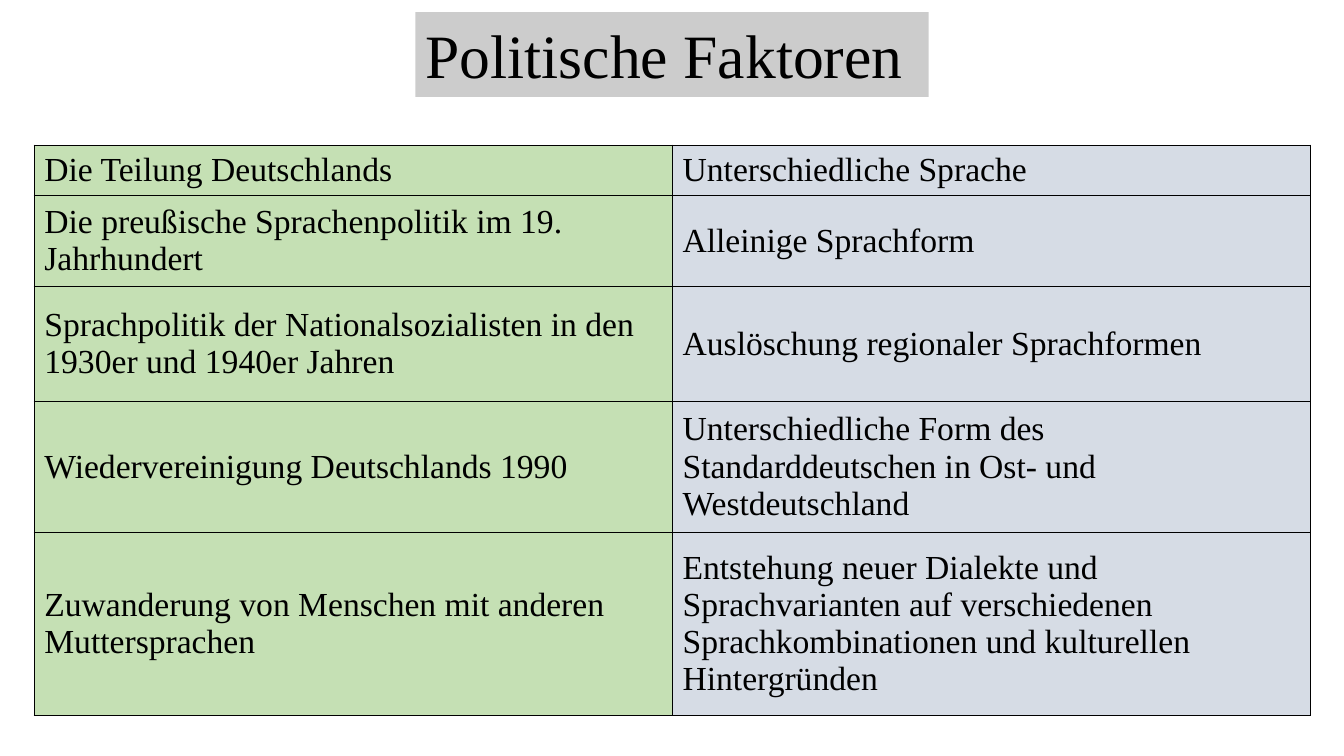
from dataclasses import dataclass

from lxml import etree
from pptx import Presentation
from pptx.dml.color import RGBColor
from pptx.enum.text import MSO_ANCHOR, MSO_AUTO_SIZE, PP_ALIGN
from pptx.oxml.ns import qn
from pptx.util import Inches, Pt

MIDDLE = MSO_ANCHOR.MIDDLE
TOP = MSO_ANCHOR.TOP
LEFT = PP_ALIGN.LEFT
FIXED = MSO_AUTO_SIZE.NONE
TITLE_ONLY = 5


@dataclass
class Theme:
    face: str = "Times New Roman"
    ink: str = "000000"
    cause: str = "C5E0B4"
    effect: str = "D6DCE5"
    head: int = 44
    body: int = 24
    rule: int = 1
    veil: int = 20


def apply(item, values):
    for name, value in values.items():
        setattr(item, name, value)


class Deck:
    def __init__(self, theme):
        self.theme = theme
        self.file = Presentation()
        apply(self.file, {"slide_width": Inches(13.33), "slide_height": Inches(7.5)})
        self.slide = self.file.slides.add_slide(self.file.slide_layouts[TITLE_ONLY])

    def label(self, frame, text, size):
        frame.text = text
        line = frame.paragraphs[0]
        line.alignment = LEFT
        font = line.runs[0].font
        apply(font, {"name": self.theme.face, "size": Pt(size)})
        font.color.rgb = RGBColor.from_string(self.theme.ink)

    def paint(self, item, color):
        item.fill.solid()
        item.fill.fore_color.rgb = RGBColor.from_string(color)

    def title(self, text, left, top, width, height):
        box = self.slide.shapes.title
        apply(box, {"left": Inches(left), "top": Inches(top),
                    "width": Inches(width), "height": Inches(height)})
        self.paint(box, self.theme.ink)
        color = box._element.spPr.find(".//" + qn("a:srgbClr"))
        etree.SubElement(color, qn("a:alpha"), val=str(self.theme.veil * 1000))
        self.label(box.text_frame, text, self.theme.head)
        apply(box.text_frame, {"word_wrap": True, "auto_size": FIXED,
                               "vertical_anchor": TOP})

    def border(self, cell):
        props = cell._tc.get_or_add_tcPr()
        for spot, side in enumerate(("a:lnL", "a:lnR", "a:lnT", "a:lnB")):
            line = etree.Element(qn(side), w=str(int(Pt(self.theme.rule))))
            fill = etree.SubElement(line, qn("a:solidFill"))
            etree.SubElement(fill, qn("a:srgbClr"), val=self.theme.ink)
            props.insert(spot, line)

    def table(self, rows, fills, heights, left, top, width):
        grid = self.slide.shapes.add_table(
            len(rows), len(fills), Inches(left), Inches(top),
            Inches(width), Inches(sum(heights))).table
        apply(grid, {"first_row": False, "horz_banding": False})
        for row, height, texts in zip(grid.rows, heights, rows):
            row.height = Inches(height)
            for cell, text, fill in zip(row.cells, texts, fills):
                self.label(cell.text_frame, text, self.theme.body)
                cell.vertical_anchor = MIDDLE
                self.paint(cell, fill)
                self.border(cell)


FACTS = [
    ("Die Teilung Deutschlands", "Unterschiedliche Sprache"),
    ("Die preußische Sprachenpolitik im 19. Jahrhundert", "Alleinige Sprachform"),
    ("Sprachpolitik der Nationalsozialisten in den 1930er und 1940er Jahren",
     "Auslöschung regionaler Sprachformen"),
    ("Wiedervereinigung Deutschlands 1990",
     "Unterschiedliche Form des Standarddeutschen in Ost- und Westdeutschland"),
    ("Zuwanderung von Menschen mit anderen Muttersprachen",
     "Entstehung neuer Dialekte und Sprachvarianten auf verschiedenen "
     "Sprachkombinationen und kulturellen Hintergründen"),
]


def main():
    theme = Theme()
    deck = Deck(theme)
    deck.title("Politische Faktoren", 4.12, 0.12, 5.09, 0.84)
    deck.table(FACTS, (theme.cause, theme.effect),
               (0.5, 0.9, 1.14, 1.3, 1.82), 0.34, 1.44, 12.66)
    deck.file.save("out.pptx")


if __name__ == "__main__":
    main()
